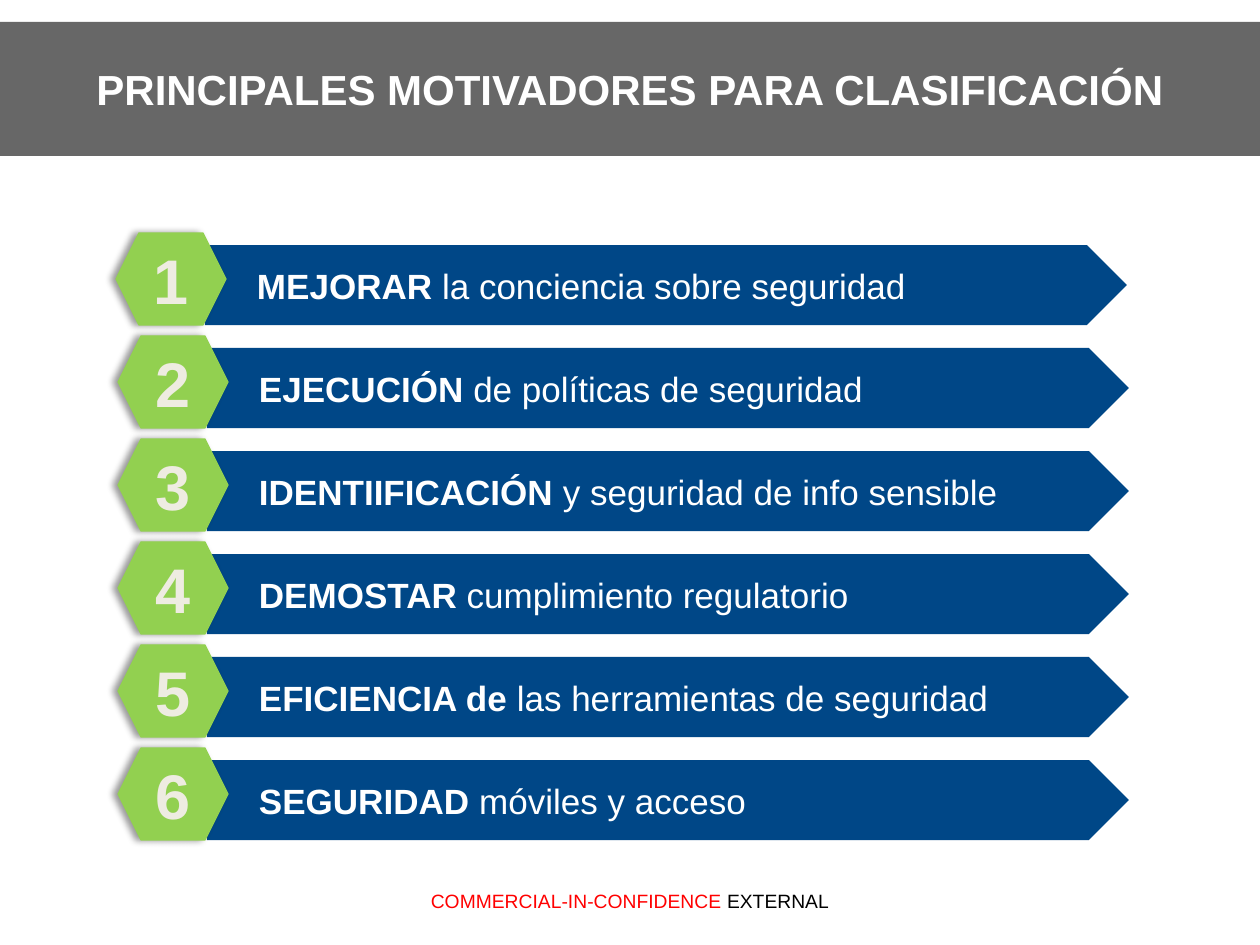
from lxml import etree
from pptx import Presentation
from pptx.dml.color import RGBColor
from pptx.enum.shapes import MSO_SHAPE
from pptx.enum.text import MSO_ANCHOR, PP_ALIGN
from pptx.oxml.ns import qn
from pptx.util import Emu, Pt

RECT, ARROW, HEX = MSO_SHAPE.RECTANGLE, MSO_SHAPE.PENTAGON, MSO_SHAPE.HEXAGON
LEFT, MID = PP_ALIGN.LEFT, PP_ALIGN.CENTER
WHITE, BLUE, GREEN = "FFFFFF", "004787", "92D050"
WIDE, HIGH = 1260, 945


def px(*nums):
    return [Emu(round(n * 914400 / 126)) for n in nums]


def write(shape, runs, size, align=MID):
    """Fill a shape with one paragraph of (text, colour, bold) runs."""
    frame = shape.text_frame
    frame.word_wrap = True
    frame.vertical_anchor = MSO_ANCHOR.MIDDLE
    para = frame.paragraphs[0]
    para.alignment = align
    for text, color, bold in runs:
        run = para.add_run()
        run.text = text
        font = run.font
        font.name, font.size, font.bold = "Arial", Pt(size), bold
        font.color.rgb = RGBColor.from_string(color)


prs = Presentation()
prs.slide_width, prs.slide_height = px(WIDE, HIGH)
slide = prs.slides.add_slide(prs.slide_layouts[5])
shapes = slide.shapes

# Title band, placed behind the title
band = shapes.add_shape(RECT, *px(0, 22, WIDE, 134))
band.shadow.inherit = False
band.fill.solid()
band.fill.fore_color.rgb = RGBColor.from_string("676767")
band.line.fill.background()
shapes._spTree.insert(2, band._element)

# Title
title = shapes.title
title.left, title.top, title.width, title.height = px(0, 22, WIDE, 134)
write(title, [("PRINCIPALES MOTIVADORES PARA CLASIFICACIÓN", WHITE, True)], 24)

# Numbered arrows
items = [
    ("MEJORAR", " la conciencia sobre seguridad"),
    ("EJECUCIÓN", " de políticas de seguridad"),
    ("IDENTIIFICACIÓN", " y seguridad de info sensible"),
    ("DEMOSTAR", " cumplimiento regulatorio"),
    ("EFICIENCIA de", " las herramientas de seguridad"),
    ("SEGURIDAD", " móviles y acceso"),
]
for i, (key, rest) in enumerate(items):
    x = 207 if i else 205
    y = 245 + 103 * i

    arrow = shapes.add_shape(ARROW, *px(x, y, 922, 80))
    arrow.shadow.inherit = False
    arrow.fill.solid()
    arrow.fill.fore_color.rgb = RGBColor.from_string(BLUE)
    arrow.line.fill.background()
    arrow.text_frame.margin_left = px(52)[0]
    write(arrow, [(key, WHITE, True), (rest, WHITE, False)], 20, LEFT)

    badge = shapes.add_shape(HEX, *px(x - 89, y - 12, 110, 92))
    badge.fill.solid()
    badge.fill.fore_color.rgb = RGBColor.from_string(GREEN)
    badge.line.color.rgb = RGBColor.from_string(GREEN)
    badge.line.width = Pt(0.75)
    write(badge, [(str(i + 1), "EEECE1", True)], 36)

    # Shadow to the left of the badge
    badge.shadow.inherit = False
    effects = badge._element.spPr.find(qn("a:effectLst"))
    shade = etree.SubElement(effects, qn("a:outerShdw"), blurRad=str(Pt(4)),
                             dist=str(Pt(3)), dir="10800000",
                             algn="r", rotWithShape="0")
    black = etree.SubElement(shade, qn("a:srgbClr"), val="000000")
    etree.SubElement(black, qn("a:alpha"), val="40000")

# Footer
foot = shapes.add_textbox(*px(0, 876, WIDE, 50))
write(foot, [("COMMERCIAL-IN-CONFIDENCE", "FF0000", False),
             (" EXTERNAL", "000000", False)], 11)

prs.save("out.pptx")
